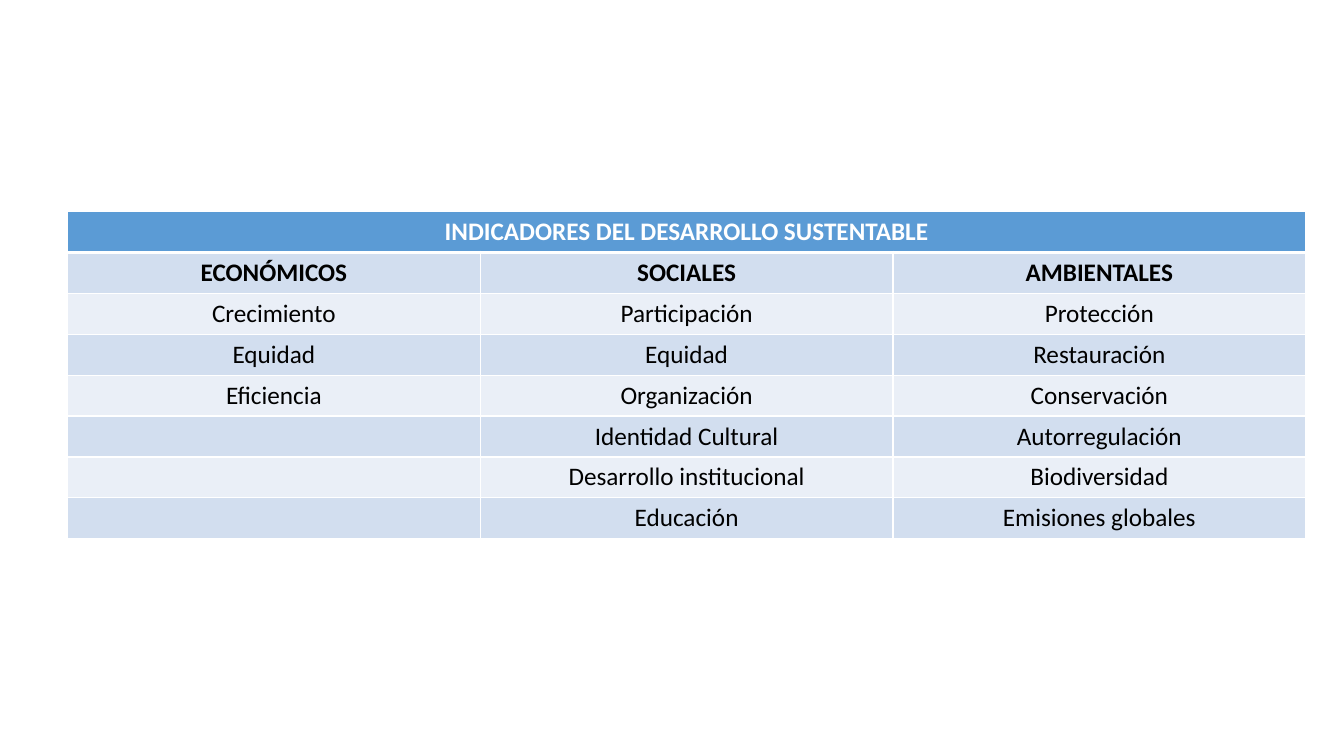
import pptx
import pptx.util
import pptx.dml.color
import pptx.enum.text
import pptx.oxml
import pptx.oxml.ns

Inches = pptx.util.Inches

# Content
TITLE = "INDICADORES DEL DESARROLLO SUSTENTABLE"
GROUPS = {
    "ECONÓMICOS": ["Crecimiento", "Equidad", "Eficiencia"],
    "SOCIALES": ["Participación", "Equidad", "Organización",
                 "Identidad Cultural", "Desarrollo institucional", "Educación"],
    "AMBIENTALES": ["Protección", "Restauración", "Conservación",
                    "Autorregulación", "Biodiversidad", "Emisiones globales"],
}

# Theme
THEME = {
    "font": "Calibri", "size": 18,
    "head": "5B9BD5", "bands": ["EAEFF7", "D2DEEF"],
    "light": "FFFFFF", "dark": "000000",
    "thin": 1, "thick": 3,
}

# Layout
LEFT, TOP, WIDTH, HEIGHT = 0.67, 2.1, 12.28, 3.24
COLS = len(GROUPS)
ROWS = 2 + max(len(items) for items in GROUPS.values())


def color(code):
    return pptx.dml.color.RGBColor.from_string(code)


def write(cell, text, bold=False, ink=THEME["dark"]):
    para = cell.text_frame.paragraphs[0]
    para.alignment = pptx.enum.text.PP_ALIGN.CENTER
    if not text:
        para.font.size = pptx.util.Pt(THEME["size"])
        return
    run = para.add_run()
    run.text = text
    run.font.name = THEME["font"]
    run.font.size = pptx.util.Pt(THEME["size"])
    run.font.bold = bold
    run.font.color.rgb = color(ink)


def paint(cell, fill, row):
    cell.fill.solid()
    cell.fill.fore_color.rgb = color(fill)
    # Cell borders, with a thick rule under the title row
    widths = {"L": THEME["thin"], "R": THEME["thin"],
              "T": THEME["thick"] if row == 1 else THEME["thin"],
              "B": THEME["thick"] if row == 0 else THEME["thin"]}
    props = cell._tc.get_or_add_tcPr()
    for place, (side, width) in enumerate(widths.items()):
        props.insert(place, pptx.oxml.parse_xml(
            f'<a:ln{side} {pptx.oxml.ns.nsdecls("a")} w="{pptx.util.Pt(width)}">'
            f'<a:solidFill><a:srgbClr val="{THEME["light"]}"/></a:solidFill>'
            f'</a:ln{side}>'))


def main():
    deck = pptx.Presentation()
    deck.slide_width, deck.slide_height = Inches(13.33), Inches(7.5)
    slide = deck.slides.add_slide(deck.slide_layouts[6])

    # Table grid
    table = slide.shapes.add_table(
        ROWS, COLS, Inches(LEFT), Inches(TOP), Inches(WIDTH), Inches(HEIGHT)).table
    for col in table.columns:
        col.width = Inches(WIDTH / COLS)
    for row in table.rows:
        row.height = Inches(HEIGHT / ROWS)

    # Title row
    for col in range(COLS):
        paint(table.cell(0, col), THEME["head"], 0)
    table.cell(0, 0).merge(table.cell(0, COLS - 1))
    write(table.cell(0, 0), TITLE, bold=True, ink=THEME["light"])

    # One column per group, in banded rows
    for col, (name, items) in enumerate(GROUPS.items()):
        words = [name, *items]
        for row in range(1, ROWS):
            cell = table.cell(row, col)
            paint(cell, THEME["bands"][row % 2], row)
            write(cell, words[row - 1] if row <= len(words) else "", bold=row == 1)

    deck.save("out.pptx")


if __name__ == "__main__":
    main()
